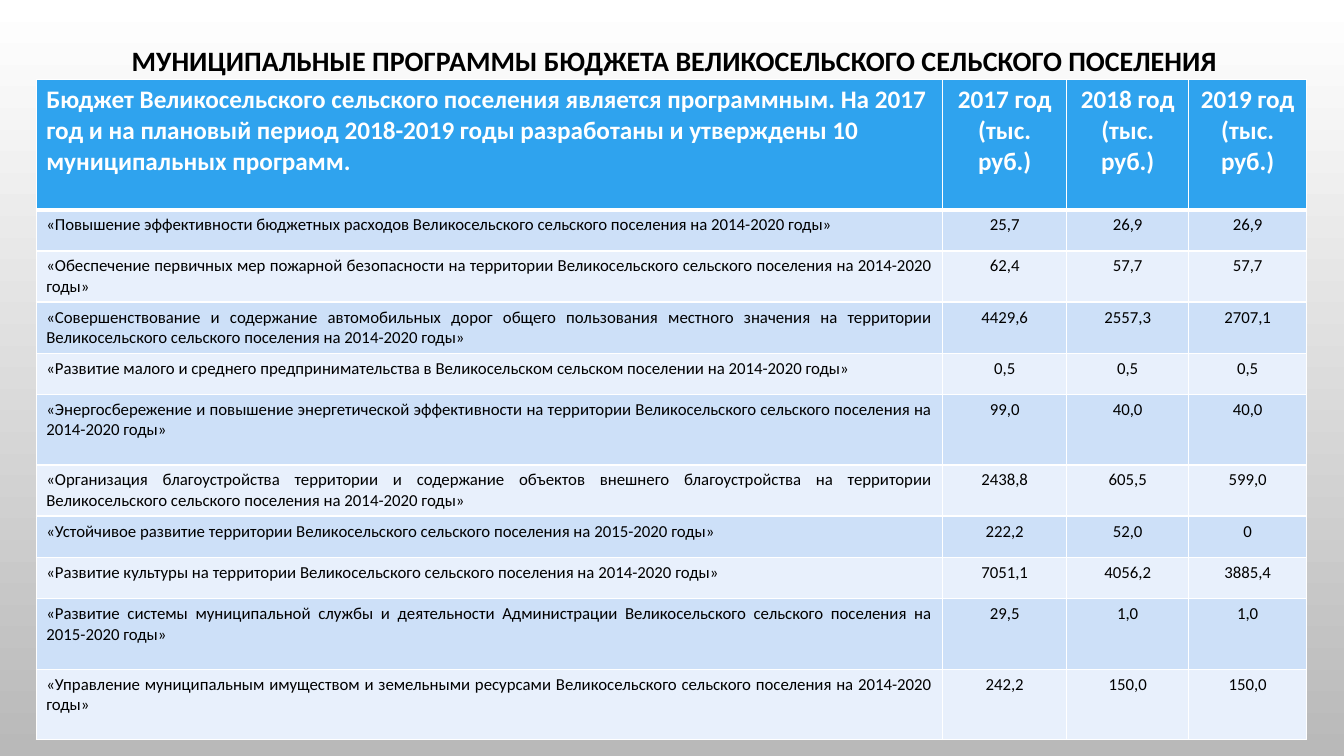
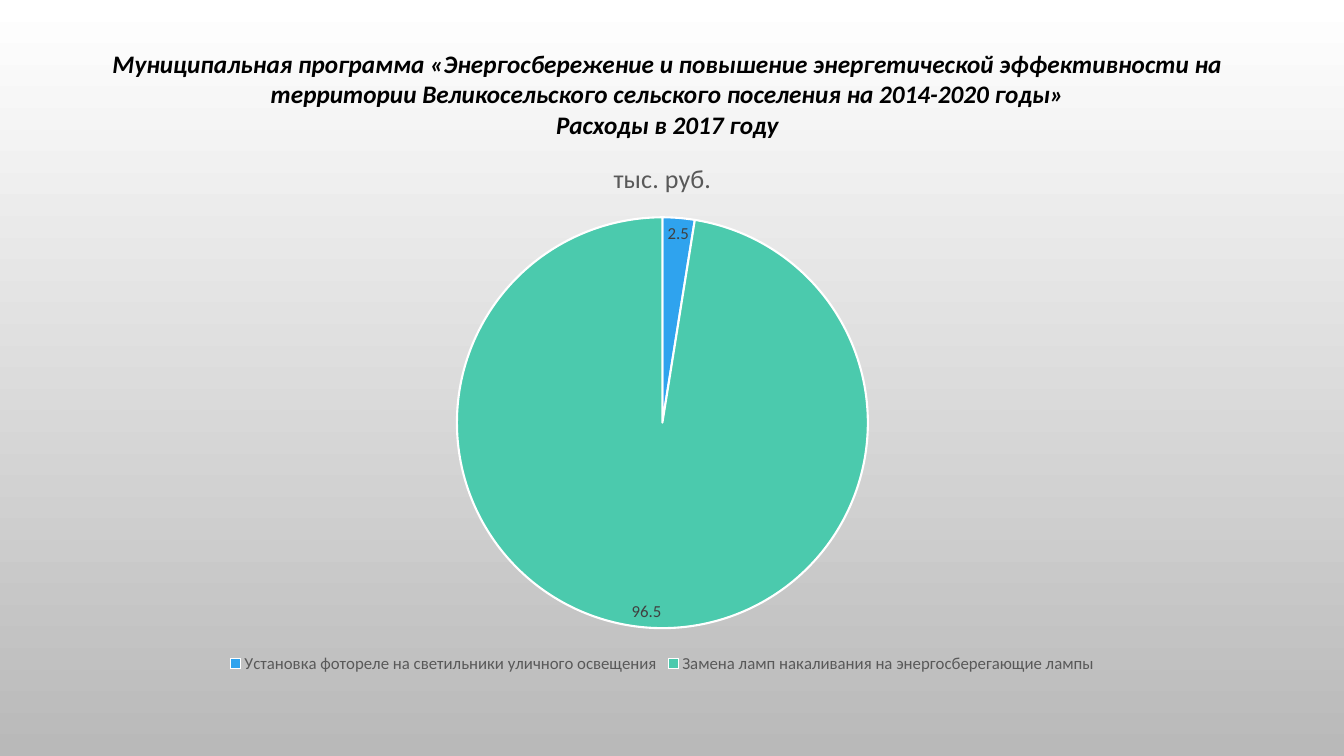
from lxml.etree import SubElement
from pptx import Presentation
from pptx.chart.data import CategoryChartData
from pptx.dml.color import RGBColor
from pptx.enum.chart import XL_CHART_TYPE, XL_LABEL_POSITION, XL_LEGEND_POSITION
from pptx.enum.text import MSO_ANCHOR, MSO_AUTO_SIZE, PP_ALIGN
from pptx.oxml.ns import qn
from pptx.util import Inches, Pt

FONT = "Calibri"
BLACK, WHITE, SILVER = "000000", "FFFFFF", "B9B9B9"
BLUE, TEAL = "2FA3EE", "4BCAAD"
BAND_DARK, BAND_LIGHT = "CDE0F8", "E8F0FC"
GREY, DARK_GREY = "595959", "404040"

HEADER = ["Бюджет Великосельского сельского поселения является программным. "
          "На 2017 год и на плановый период 2018-2019 годы разработаны и утверждены "
          "10 муниципальных программ."]
HEADER += [f"{year} год (тыс. руб.)" for year in (2017, 2018, 2019)]

PROGRAMS = [
    (0.41, "«Повышение эффективности бюджетных расходов Великосельского сельского "
           "поселения на 2014-2020 годы»", "25,7", "26,9", "26,9"),
    (0.5, "«Обеспечение первичных мер пожарной безопасности на территории "
          "Великосельского сельского поселения на 2014-2020 годы»", "62,4", "57,7", "57,7"),
    (0.5, "«Совершенствование и содержание автомобильных дорог общего пользования "
          "местного значения на территории Великосельского сельского поселения "
          "на 2014-2020 годы»", "4429,6", "2557,3", "2707,1"),
    (0.41, "«Развитие малого и среднего предпринимательства в Великосельском сельском "
           "поселении на 2014-2020 годы»", "0,5", "0,5", "0,5"),
    (0.7, "«Энергосбережение и повышение энергетической эффективности на территории "
          "Великосельского сельского поселения на 2014-2020 годы»", "99,0", "40,0", "40,0"),
    (0.5, "«Организация благоустройства территории и содержание объектов внешнего "
          "благоустройства на территории Великосельского сельского поселения "
          "на 2014-2020 годы»", "2438,8", "605,5", "599,0"),
    (0.41, "«Устойчивое развитие территории Великосельского сельского поселения "
           "на 2015-2020 годы»", "222,2", "52,0", "0"),
    (0.41, "«Развитие культуры на территории Великосельского сельского поселения "
           "на 2014-2020 годы»", "7051,1", "4056,2", "3885,4"),
    (0.7, "«Развитие системы муниципальной службы и деятельности Администрации "
          "Великосельского сельского поселения на 2015-2020 годы»", "29,5", "1,0", "1,0"),
    (0.7, "«Управление муниципальным имуществом и земельными ресурсами "
          "Великосельского сельского поселения на 2014-2020 годы»",
     "242,2", "150,0", "150,0"),
]


def rgb(color):
    return RGBColor.from_string(color)


def style_font(font, size, color, bold=False, italic=False):
    font.name = FONT
    font.size = Pt(size)
    font.color.rgb = rgb(color)
    font.bold = bold
    font.italic = italic


def set_borders(cell, bottom):
    properties = cell._tc.get_or_add_tcPr()
    for side, width in (("L", 1), ("R", 1), ("T", 1), ("B", bottom)):
        line = SubElement(properties, qn(f"a:ln{side}"), w=str(Pt(width)))
        fill = SubElement(line, qn("a:solidFill"))
        SubElement(fill, qn("a:srgbClr"), val=WHITE)


class BudgetDeck:
    def __init__(self):
        self.deck = Presentation()
        self.deck.slide_width = Inches(13.33)
        self.deck.slide_height = Inches(7.5)
        self.page = None
        fill = self.deck.slide_master.background.fill
        fill.gradient()
        fill.gradient_angle = 270
        for stop, position, color in zip(fill.gradient_stops, (0, 1), (WHITE, SILVER)):
            stop.position = position
            stop.color.rgb = rgb(color)

    def add_page(self, lines, place, size, italic=False):
        self.page = self.deck.slides.add_slide(self.deck.slide_layouts[5])
        title = self.page.shapes.title
        title.left, title.top, title.width, title.height = map(Inches, place)
        frame = title.text_frame
        frame.text = "\n".join(lines)
        frame.word_wrap = True
        frame.auto_size = MSO_AUTO_SIZE.NONE
        frame.vertical_anchor = MSO_ANCHOR.TOP
        for para in frame.paragraphs:
            para.alignment = PP_ALIGN.CENTER
            style_font(para.font, size, BLACK, bold=True, italic=italic)

    def add_cell(self, cell, text, align, fill, size, color, header):
        set_borders(cell, 3 if header else 1)
        cell.fill.solid()
        cell.fill.fore_color.rgb = rgb(fill)
        cell.text = text
        para = cell.text_frame.paragraphs[0]
        para.alignment = align
        style_font(para.font, size, color, bold=header)

    def add_table(self, header, programs, place, widths, header_height):
        rows = [(header_height, *header), *programs]
        table = self.page.shapes.add_table(
            len(rows), len(widths), *map(Inches, place)).table
        for column, width in zip(table.columns, widths):
            column.width = Inches(width)
        for index, (height, *texts) in enumerate(rows):
            table.rows[index].height = Inches(height)
            is_header = index == 0
            band = BAND_DARK if index % 2 else BAND_LIGHT
            look = (BLUE, 18, WHITE) if is_header else (band, 12, BLACK)
            name_align = PP_ALIGN.LEFT if is_header else PP_ALIGN.JUSTIFY
            for column, text in enumerate(texts):
                align = PP_ALIGN.CENTER if column else name_align
                self.add_cell(table.cell(index, column), text, align, *look, is_header)

    def add_pie(self, name, slices, place):
        data = CategoryChartData(number_format="0.0")
        data.categories = [label for label, value, color in slices]
        data.add_series(name, [value for label, value, color in slices])
        chart = self.page.shapes.add_chart(
            XL_CHART_TYPE.PIE, *map(Inches, place), data).chart
        style_font(chart.font, 10, BLACK)

        chart.has_title = True
        chart.chart_title.include_in_layout = False
        chart.chart_title.text_frame.text = name
        style_font(chart.chart_title.text_frame.paragraphs[0].font, 18.6, GREY)

        chart.has_legend = True
        chart.legend.position = XL_LEGEND_POSITION.BOTTOM
        chart.legend.include_in_layout = False
        style_font(chart.legend.font, 12, GREY)

        plot = chart.plots[0]
        plot.vary_by_categories = True
        for index, (label, value, color) in enumerate(slices):
            look = plot.series[0].points[index].format
            look.fill.solid()
            look.fill.fore_color.rgb = rgb(color)
            look.line.color.rgb = rgb(WHITE)
            look.line.width = Pt(1.5)

        labels = plot.series[0].data_labels
        labels.show_value = True
        labels.number_format = "0.0"
        labels.number_format_is_linked = False
        labels.position = XL_LABEL_POSITION.INSIDE_END
        style_font(labels.font, 12, DARK_GREY)


def main():
    budget = BudgetDeck()
    budget.add_page(
        ["МУНИЦИПАЛЬНЫЕ ПРОГРАММЫ БЮДЖЕТА ВЕЛИКОСЕЛЬСКОГО СЕЛЬСКОГО ПОСЕЛЕНИЯ"],
        (0.45, 0.38, 12.48, 0.44), 20)
    budget.add_table(HEADER, PROGRAMS, (0.36, 0.79, 12.6, 6.53),
                     (8.99, 1.23, 1.21, 1.17), 1.29)

    budget.add_page(
        ["Муниципальная программа «Энергосбережение и повышение энергетической "
         "эффективности на территории Великосельского сельского поселения "
         "на 2014-2020 годы»", "Расходы в 2017 году"],
        (0.47, 0.43, 12.3, 1.01), 18, italic=True)
    budget.add_pie("тыс. руб.", [
        ("Установка фотореле на светильники уличного освещения", 2.5, BLUE),
        ("Замена ламп накаливания на энергосберегающие лампы", 96.5, TEAL),
    ], (0.92, 1.38, 11.3, 5.34))
    budget.deck.save("out.pptx")


if __name__ == "__main__":
    main()
